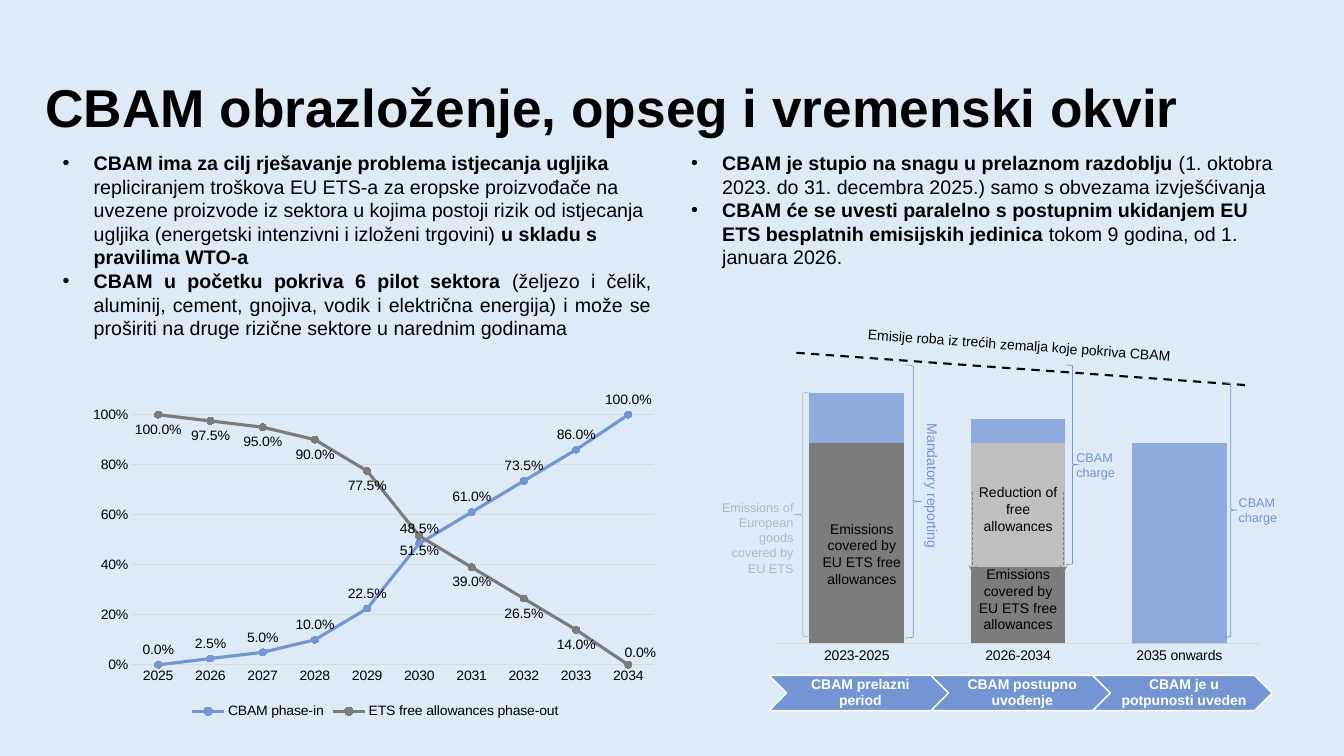
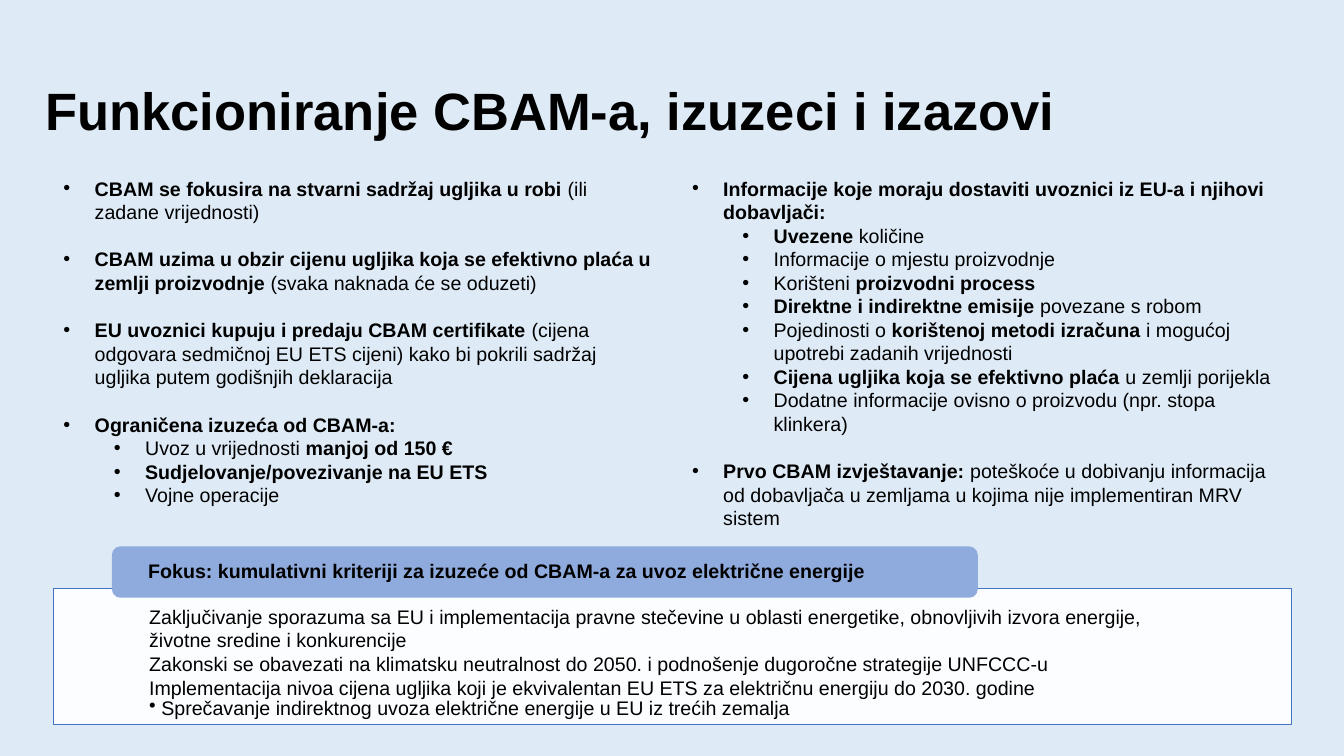
from typing import NamedTuple

from pptx import Presentation
from pptx.chart.chart import Chart
from pptx.chart.data import CategoryChartData
from pptx.dml.color import RGBColor
from pptx.dml.line import LineFormat
from pptx.enum.chart import (XL_CHART_TYPE, XL_LABEL_POSITION, XL_LEGEND_POSITION,
                             XL_MARKER_STYLE, XL_TICK_MARK)
from pptx.enum.dml import MSO_LINE
from pptx.enum.shapes import MSO_CONNECTOR, MSO_SHAPE
from pptx.enum.text import MSO_ANCHOR, MSO_AUTO_SIZE, PP_ALIGN
from pptx.oxml import parse_xml
from pptx.oxml.ns import nsdecls
from pptx.oxml.xmlchemy import OxmlElement
from pptx.presentation import Presentation as Deck
from pptx.shapes.autoshape import Shape
from pptx.slide import Slide
from pptx.text.text import TextFrame, _Paragraph as Par
from pptx.util import Inches, Pt

FONT = "Arial"
HEX = {"sky": "DEEBF7", "black": "000000", "white": "FFFFFF", "blue": "7395D3",
       "pale": "8FAADC", "gray": "7C7C7C", "silver": "BFBFBF", "rule": "D9D9D9",
       "mist": "ADB9CA", "edge": "4472C4", "dash": "808080"}
LEFT, CENTER, RIGHT = PP_ALIGN.LEFT, PP_ALIGN.CENTER, PP_ALIGN.RIGHT
COLS, ROWS = 133.33, 75
TEXT_W, TEXT_GAP = 60.45, 1.9


class Box(NamedTuple):
    """A place on the grid: column, row, columns wide, rows high."""
    x: float
    y: float
    w: float
    h: float


class Item(NamedTuple):
    """A bullet; text between asterisks is bold."""
    text: str
    level: int = 0
    gap: int = 0
    align: PP_ALIGN = LEFT


class Note(NamedTuple):
    text: str
    box: Box
    align: PP_ALIGN = CENTER
    color: str = "black"
    size: float = 10
    turn: float = 0
    wrap: bool = True


class Brace(NamedTuple):
    box: Box
    kind: MSO_SHAPE = MSO_SHAPE.RIGHT_BRACE
    color: str = "blue"


class Dash(NamedTuple):
    start: tuple[float, float]
    end: tuple[float, float]
    color: str
    width: float
    arrow: bool = False


class Line(NamedTuple):
    name: str
    values: list[float]
    color: str
    spot: XL_LABEL_POSITION


LINES = [
    Line("CBAM phase-in", [0, .025, .05, .1, .225, .485, .61, .735, .86, 1],
         "blue", XL_LABEL_POSITION.ABOVE),
    Line("ETS free allowances phase-out",
         [1, .975, .95, .9, .775, .515, .39, .265, .14, 0],
         "gray", XL_LABEL_POSITION.BELOW)]
BARS = [("Series 1", [100, 38, 0], "gray"), ("Series 2", [None, 62, None], "silver"),
        ("Series 3", [25, 12, 100], "pale")]
COVER = "Emissions covered by EU ETS free allowances"
NOTES = [
    Note("Emisije roba iz trećih zemalja koje pokriva CBAM", Box(85.1, 32.9, 32.4, 2.7),
         LEFT, turn=4.1, wrap=False),
    Note(COVER, Box(80, 51.1, 11, 7.7)),
    Note(COVER, Box(95.5, 55.6, 11, 7.7)),
    Note("Reduction of free allowances", Box(95.5, 47.5, 11, 6.1)),
    Note("Mandatory reporting", Box(83.9, 48.3, 17.2, 2.7), LEFT, "blue", turn=90),
    Note("CBAM charge", Box(105.8, 44.1, 6.5, 4), LEFT, "blue", 9),
    Note("CBAM charge", Box(121.9, 48.6, 6.7, 4), LEFT, "blue", 9),
    Note("Emissions of European goods covered by EU ETS", Box(69.7, 49.1, 10, 8.6),
         RIGHT, "mist", 9)]
BRACES = [
    Brace(Box(89.8, 36.2, 1.6, 27.1)), Brace(Box(105.8, 36.2, 1.2, 19.8)),
    Brace(Box(121.5, 38, 1.2, 25.2)),
    Brace(Box(78.8, 38.9, 1.7, 24.3), MSO_SHAPE.LEFT_BRACE, "mist")]
DASHES = [Dash((79, 35), (123.5, 38.2), "black", 1.5),
          *(Dash((x, 48.8), (x, 56.9), "dash", .5, True) for x in (96.5, 105.5))]
STEPS = ["CBAM prelazni period", "CBAM postupno uvođenje", "CBAM je u potpunosti uveden"]

SCOPE = [
    Item("*CBAM ima za cilj rješavanje problema istjecanja ugljika *repliciranjem troškova "
         "EU ETS-a za eropske proizvođače na uvezene proizvode iz sektora u kojima postoji "
         "rizik od istjecanja ugljika (energetski intenzivni i izloženi trgovini) "
         "*u skladu s pravilima WTO-a*"),
    Item("*CBAM u početku pokriva 6 pilot sektora *(željezo i čelik, aluminij, cement, "
         "gnojiva, vodik i električna energija) i može se proširiti na druge rizične "
         "sektore u narednim godinama", align=PP_ALIGN.JUSTIFY)]
TIMING = [
    Item("*CBAM je stupio na snagu u prelaznom razdoblju *(1. oktobra 2023. do "
         "31. decembra 2025.) samo s obvezama izvješćivanja"),
    Item("*CBAM će se uvesti paralelno s postupnim ukidanjem EU ETS besplatnih emisijskih "
         "jedinica *tokom 9 godina, od 1. januara 2026.")]
WORKING = [
    Item("*CBAM se fokusira na stvarni sadržaj ugljika u robi *(ili zadane vrijednosti)"),
    Item("*CBAM uzima u obzir cijenu ugljika koja se efektivno plaća u zemlji proizvodnje "
         "*(svaka naknada će se oduzeti)", gap=17),
    Item("*EU uvoznici kupuju i predaju CBAM certifikate* (cijena odgovara sedmičnoj "
         "EU ETS cijeni) kako bi pokrili sadržaj ugljika putem godišnjih deklaracija", gap=17),
    Item("*Ograničena izuzeća od CBAM-a:*", gap=17),
    Item("Uvoz u vrijednosti *manjoj od 150 €*", 1),
    Item("*Sudjelovanje/povezivanje na EU ETS*", 1),
    Item("Vojne operacije", 1)]
REPORT = [
    Item("*Informacije koje moraju dostaviti uvoznici iz EU-a i njihovi dobavljači:*"),
    Item("*Uvezene *količine", 1),
    Item("Informacije o mjestu proizvodnje", 1),
    Item("Korišteni *proizvodni process*", 1),
    Item("*Direktne i indirektne emisije *povezane s robom", 1),
    Item("Pojedinosti o *korištenoj metodi izračuna *i mogućoj upotrebi zadanih "
         "vrijednosti", 1),
    Item("*Cijena ugljika koja se efektivno plaća *u zemlji porijekla", 1),
    Item("Dodatne informacije ovisno o proizvodu (npr. stopa klinkera)", 1),
    Item("*Prvo CBAM izvještavanje: *poteškoće u dobivanju informacija od dobavljača u "
         "zemljama u kojima nije implementiran MRV sistem", gap=17)]
TERMS = [
    "Zaključivanje sporazuma sa EU i implementacija pravne stečevine u oblasti energetike, "
    "obnovljivih izvora energije, životne sredine i konkurencije",
    "Zakonski se obavezati na klimatsku neutralnost do 2050. i podnošenje dugoročne "
    "strategije UNFCCC-u",
    "Implementacija nivoa cijena ugljika koji je ekvivalentan EU ETS za električnu energiju "
    "do 2030. godine",
    "Sprečavanje indirektnog uvoza električne energije u EU iz trećih zemalja"]


def rgb(name: str) -> RGBColor:
    return RGBColor.from_string(HEX[name])


def cell(n: float) -> int:
    """Length of n grid cells."""
    return Inches(n / 10)


def span(box: Box) -> list[int]:
    return [cell(n) for n in box]


def place(shape: Shape, box: Box) -> None:
    shape.left, shape.top, shape.width, shape.height = span(box)


def ink(par: Par, size: float, color: str = "black", bold: bool = False) -> None:
    for run in par.runs:
        font = run.font
        font.name, font.size, font.bold = FONT, Pt(size), bold
        font.color.rgb = rgb(color)


def pad(frame: TextFrame, left: float, top: float, right: float, base: float) -> None:
    frame.margin_left, frame.margin_top = cell(left), cell(top)
    frame.margin_right, frame.margin_bottom = cell(right), cell(base)


def dot(par: Par, left: float, hang: float) -> None:
    """Give a paragraph a hanging round bullet."""
    props = par._p.get_or_add_pPr()
    props.set("marL", str(cell(left)))
    props.set("indent", str(-cell(hang)))
    mark = OxmlElement("a:buChar")
    mark.set("char", "•")
    props.append(mark)


def stroke(line: LineFormat, color: str, width: float) -> None:
    line.color.rgb, line.width = rgb(color), Pt(width)


def fill_list(shape: Shape, box: Box, items: list[Item]) -> None:
    place(shape, box)
    frame = shape.text_frame
    frame.auto_size = MSO_AUTO_SIZE.NONE
    for i, item in enumerate(items):
        par = frame.add_paragraph() if i else frame.paragraphs[0]
        par.level, par.alignment = item.level, item.align
        par.space_before = Pt(item.gap)
        dot(par, 3.1 + 5 * item.level, 3.1)
        for j, part in enumerate(item.text.split("*")):
            if part:
                par.add_run().text = part
                par.runs[-1].font.bold = j % 2 == 1
        for run in par.runs:
            run.font.name, run.font.size = FONT, Pt(14)
            run.font.color.rgb = rgb("black")


def add_page(deck: Deck, title: str, size: float, lead: float, body: Box,
             lists: list[list[Item]]) -> Slide:
    """Add a slide with a title and two columns of bullets."""
    page = deck.slides.add_slide(deck.slide_layouts[3])
    head, *parts = page.placeholders
    place(head, Box(3.5, 8.4, 126.2, 5.9))
    frame = head.text_frame
    frame.text = title
    frame.auto_size, frame.vertical_anchor = MSO_AUTO_SIZE.NONE, MSO_ANCHOR.BOTTOM
    par = frame.paragraphs[0]
    par.alignment, par.line_spacing = LEFT, lead
    ink(par, size, bold=True)
    for i, (part, items) in enumerate(zip(parts, lists)):
        fill_list(part, body._replace(x=body.x + i * (body.w + TEXT_GAP)), items)
    return page


def add_form(page: Slide, kind: MSO_SHAPE, box: Box, fill: str = "") -> Shape:
    form = page.shapes.add_shape(kind, *span(box))
    form.shadow.inherit = False
    if fill:
        form.fill.solid()
        form.fill.fore_color.rgb = rgb(fill)
    else:
        form.fill.background()
    return form


def add_note(page: Slide, note: Note) -> None:
    form = page.shapes.add_textbox(*span(note.box))
    form.rotation = note.turn
    frame = form.text_frame
    frame.text, frame.word_wrap = note.text, note.wrap
    frame.paragraphs[0].alignment = note.align
    ink(frame.paragraphs[0], note.size, note.color)


def add_dash(page: Slide, dash: Dash) -> None:
    ends = [cell(n) for n in dash.start + dash.end]
    link = page.shapes.add_connector(MSO_CONNECTOR.STRAIGHT, *ends)
    stroke(link.line, dash.color, dash.width)
    link.line.dash_style = MSO_LINE.DASH
    if dash.arrow:
        tip = OxmlElement("a:tailEnd")
        tip.set("type", "stealth")
        link.line._get_or_add_ln().append(tip)
    link._element.spPr.append(OxmlElement("a:effectLst"))


def layout(x: float, y: float, w: float = 0, h: float = 0):
    """Manual chart layout; without a size it is an offset."""
    size = f'<c:w val="{w}"/><c:h val="{h}"/>' if w else ""
    mode = ('<c:layoutTarget val="inner"/><c:xMode val="edge"/><c:yMode val="edge"/>'
            if w else "")
    return parse_xml(f'<c:layout {nsdecls("c")}><c:manualLayout>{mode}<c:x val="{x}"/>'
                     f'<c:y val="{y}"/>{size}</c:manualLayout></c:layout>')


def add_plot(page: Slide, kind: XL_CHART_TYPE, box: Box, data: CategoryChartData,
             inner: tuple[float, float, float, float]) -> Chart:
    chart = page.shapes.add_chart(kind, *span(box), data).chart
    chart.has_title = chart.has_legend = False
    chart.font.name, chart.font.size = FONT, Pt(10)
    chart.font.color.rgb = rgb("black")
    chart.plots[0].vary_by_categories = False
    axis = chart.category_axis
    axis.major_tick_mark = XL_TICK_MARK.NONE
    stroke(axis.format.line, "rule", .75)
    area = chart._chartSpace.xpath("c:chart/c:plotArea")[0]
    for old in area.xpath("c:layout"):
        area.remove(old)
    area.insert(0, layout(*inner))
    return chart


def add_lines(page: Slide) -> None:
    data = CategoryChartData(number_format="0.0%")
    data.categories = [str(year) for year in range(2025, 2035)]
    for line in LINES:
        data.add_series(line.name, line.values)
    chart = add_plot(page, XL_CHART_TYPE.LINE_MARKERS, Box(7.8, 38.9, 58.9, 32.8), data,
                     (.09, .04, .88, .78))
    chart.has_legend = True
    chart.legend.position = XL_LEGEND_POSITION.BOTTOM
    chart.legend.include_in_layout = False
    axis = chart.value_axis
    axis.minimum_scale, axis.maximum_scale, axis.major_unit = 0, 1, .2
    axis.major_tick_mark = XL_TICK_MARK.NONE
    axis.tick_labels.number_format = "0%"
    axis.tick_labels.number_format_is_linked = False
    axis.format.line.fill.background()
    stroke(axis.major_gridlines.format.line, "rule", .75)
    for series, line in zip(chart.plots[0].series, LINES):
        series.smooth = False
        stroke(series.format.line, line.color, 2.25)
        mark = series.marker
        mark.style, mark.size = XL_MARKER_STYLE.CIRCLE, 5
        mark.format.fill.solid()
        mark.format.fill.fore_color.rgb = rgb(line.color)
        stroke(mark.format.line, line.color, .75)
        tags = series.data_labels
        tags.show_value, tags.position = True, line.spot
        tags.number_format, tags.number_format_is_linked = "0.0%", False
    last = chart.plots[0].series[1].points[9].data_label
    last.position = XL_LABEL_POSITION.ABOVE
    last._dLbl.insert(1, layout(.02, .01))


def add_bars(page: Slide) -> None:
    data = CategoryChartData()
    data.categories = ["2023-2025", "2026-2034", "2035 onwards"]
    for name, values, _ in BARS:
        data.add_series(name, values)
    chart = add_plot(page, XL_CHART_TYPE.COLUMN_STACKED, Box(76, 33.4, 50, 33.1), data,
                     (.02, .08, .96, .84))
    axis = chart.value_axis
    axis.minimum_scale, axis.maximum_scale = 0, 140
    axis.has_major_gridlines = axis.visible = False
    chart.plots[0].gap_width, chart.plots[0].overlap = 70, 100
    for series, (_, _, color) in zip(chart.plots[0].series, BARS):
        series.format.fill.solid()
        series.format.fill.fore_color.rgb = rgb(color)


def add_step(page: Slide, text: str, box: Box) -> None:
    form = add_form(page, MSO_SHAPE.CHEVRON, box, "blue")
    stroke(form.line, "white", 1)
    frame = form.text_frame
    frame.text, frame.vertical_anchor = text, MSO_ANCHOR.MIDDLE
    pad(frame, .4, .1, .1, .1)
    par = frame.paragraphs[0]
    par.alignment, par.line_spacing = CENTER, .9
    ink(par, 10, "white", True)


def add_focus(page: Slide) -> None:
    """Draw the framed criteria with their heading tab."""
    panel = add_form(page, MSO_SHAPE.RECTANGLE, Box(5.3, 58.4, 122.8, 13.5), "white")
    stroke(panel.line, "edge", 1)
    alpha = OxmlElement("a:alpha")
    alpha.set("val", "90000")
    panel._element.spPr.xpath("a:solidFill/a:srgbClr")[0].append(alpha)
    frame = panel.text_frame
    frame.text, frame.vertical_anchor = "\n".join(TERMS), MSO_ANCHOR.TOP
    pad(frame, 9.5, 1.6, 9.5, 1.1)
    for par in frame.paragraphs:
        par.alignment = LEFT
        ink(par, 14)
    par.line_spacing = .9
    dot(par, 1.2, 1.2)

    tab = add_form(page, MSO_SHAPE.ROUNDED_RECTANGLE, Box(11.1, 54.2, 85.9, 5.1), "pale")
    tab.line.fill.background()
    frame = tab.text_frame
    frame.text = "Fokus: kumulativni kriteriji za izuzeće od CBAM-a za uvoz električne energije"
    frame.vertical_anchor = MSO_ANCHOR.MIDDLE
    pad(frame, 3.35, 0, 3.2, 0)
    frame.paragraphs[0].alignment, frame.paragraphs[0].line_spacing = LEFT, .9
    ink(frame.paragraphs[0], 14, bold=True)


def main() -> None:
    deck = Presentation()
    deck.slide_width, deck.slide_height = cell(COLS), cell(ROWS)
    back = deck.slide_master.background.fill
    back.solid()
    back.fore_color.rgb = rgb("sky")

    page = add_page(deck, "CBAM obrazloženje, opseg i vremenski okvir", 38, .9,
                    Box(5.2, 14.5, TEXT_W, 22.7), [SCOPE, TIMING])
    add_lines(page)
    add_bars(page)
    for note in NOTES:
        add_note(page, note)
    for i, step in enumerate(STEPS):
        add_step(page, step, Box(76.3 + 16.05 * i, 67, 17.8, 3.5))
    for dash in DASHES:
        add_dash(page, dash)
    for brace in BRACES:
        form = add_form(page, brace.kind, brace.box)
        stroke(form.line, brace.color, .5)

    page = add_page(deck, "Funkcioniranje CBAM-a, izuzeci i izazovi", 37.5, .7,
                    Box(5.3, 17, TEXT_W, 41.1), [WORKING, REPORT])
    add_focus(page)
    deck.save("out.pptx")


if __name__ == "__main__":
    main()
